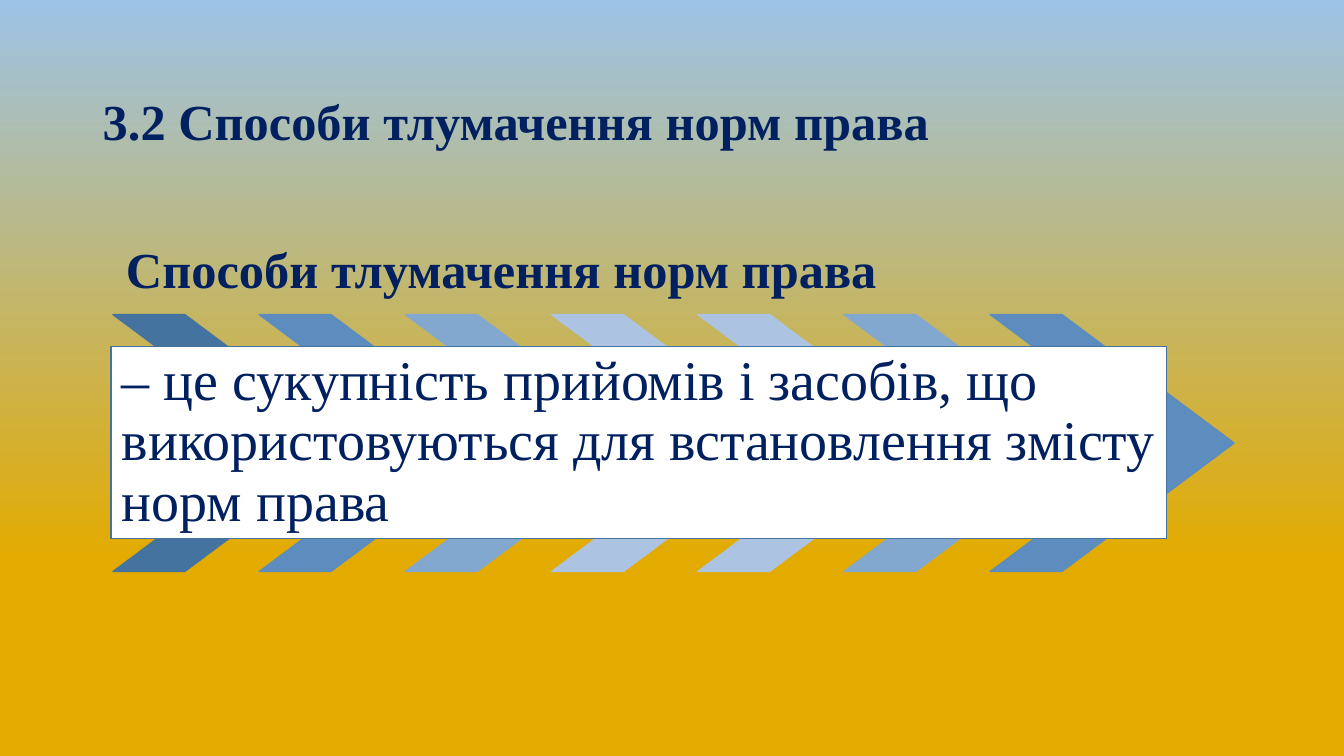
from pptx import Presentation
from pptx.dml.color import RGBColor
from pptx.enum import shapes as shp, text as txt
from pptx.util import Inches, Pt

NAVY = "002060"
STEEL = "43739E"
CHEVRON_COLOURS = [STEEL, "5D8DBE", "83A8D0", "ACC4E2", "ACC4E2", "83A8D0", "5D8DBE"]


def rgb(value):
    return RGBColor.from_string(value)


def add_text(slide, words, box, size=36, bold=True, anchor="MIDDLE", inset=(0.1, 0.05)):
    frame = slide.shapes.add_textbox(*map(Inches, box)).text_frame
    frame.word_wrap = True
    frame.vertical_anchor = txt.MSO_ANCHOR[anchor]
    frame.margin_left = frame.margin_right = Inches(inset[0])
    frame.margin_top = frame.margin_bottom = Inches(inset[1])
    paragraph = frame.paragraphs[0]
    paragraph.line_spacing = 0.9
    run = paragraph.add_run()
    run.text = words
    run.font.name = "Times New Roman"
    run.font.size = Pt(size)
    run.font.bold = bold
    run.font.color.rgb = rgb(NAVY)


def add_filled(slide, kind, box, fill, line):
    shape = slide.shapes.add_shape(kind, *map(Inches, box))
    shape.shadow.inherit = False
    shape.fill.solid()
    shape.fill.fore_color.rgb = rgb(fill)
    shape.line.color.rgb = rgb(line)
    shape.line.width = Pt(1)
    return shape


def paint_background(slide):
    # Gold at the bottom rising to sky blue at the top
    fill = slide.background.fill
    fill.gradient()
    fill.gradient_angle = 90
    for stop, position, colour in zip(fill.gradient_stops, (0.26, 1), ("E3AB00", "9DC3E6")):
        stop.position = position
        stop.color.rgb = rgb(colour)


def add_definition(slide, left, top, width):
    # Term above the band
    add_text(slide, "Способи тлумачення норм права", (left, top, width, 0.94),
             anchor="BOTTOM", inset=(0.15, 0.15))

    # Band of evenly spaced chevrons
    for i, colour in enumerate(CHEVRON_COLOURS):
        chevron = add_filled(slide, shp.MSO_SHAPE.CHEVRON,
                             (left + 0.02 + 1.45 * i, top + 0.94, 2.42, 2.55), colour, colour)
        chevron.adjustments[0] = 0.706

    # White panel with the meaning of the term
    panel = (left, top + 1.26, width + 0.13, 1.9)
    add_filled(slide, shp.MSO_SHAPE.RECTANGLE, panel, "FFFFFF", STEEL)
    add_text(slide, "– це сукупність прийомів і засобів, що використовуються "
             "для встановлення змісту норм права", panel,
             size=40, bold=False, inset=(0.11, 0.11))


def main():
    deck = Presentation()
    deck.slide_width, deck.slide_height = Inches(13.33), Inches(7.5)
    slide = deck.slides.add_slide(deck.slide_layouts[6])
    paint_background(slide)
    add_text(slide, "3.2 Способи тлумачення норм права", (0.92, 0.39, 12.28, 1.68))
    add_definition(slide, left=1.1, top=2.18, width=10.34)
    deck.save("out.pptx")


if __name__ == "__main__":
    main()
